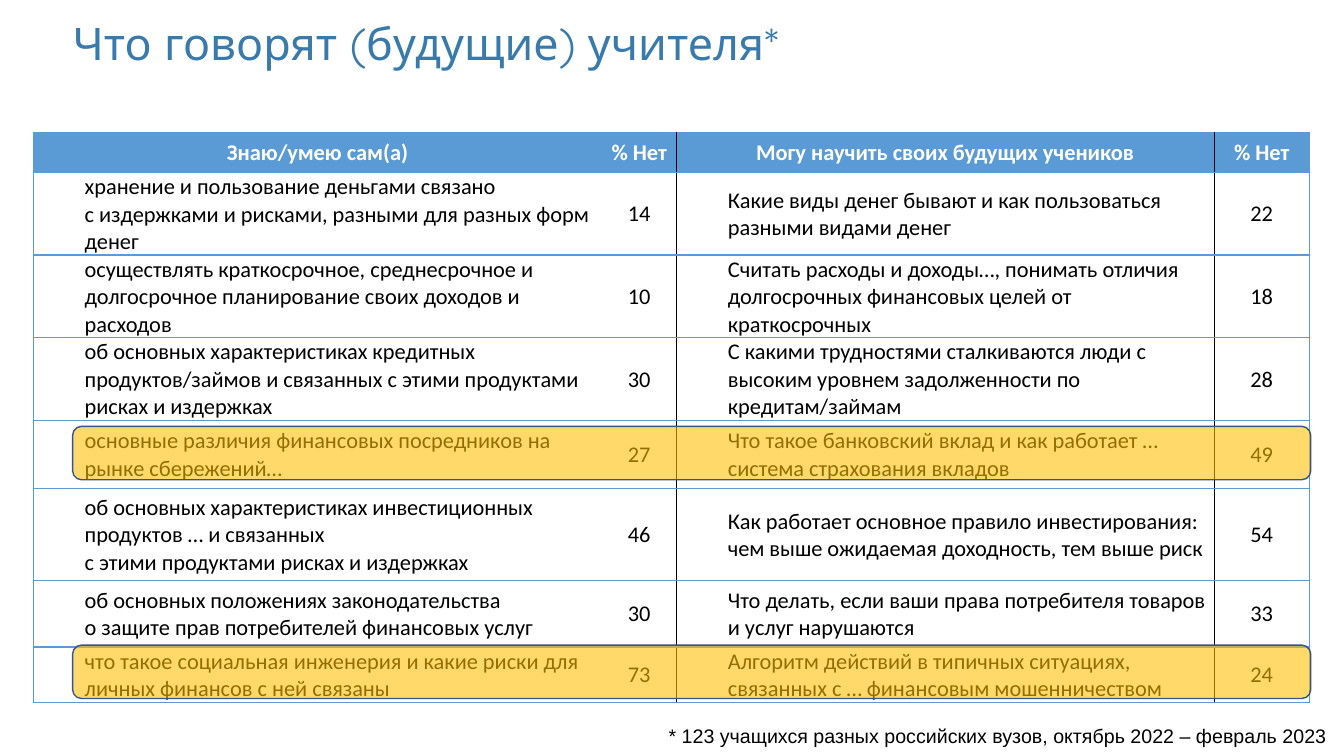
from dataclasses import dataclass

from lxml.etree import SubElement
from pptx import Presentation
from pptx.dml.color import RGBColor
from pptx.enum.shapes import MSO_SHAPE
from pptx.enum.text import MSO_ANCHOR, PP_ALIGN
from pptx.oxml.ns import qn
from pptx.util import Inches, Pt


@dataclass(frozen=True)
class Theme:
    """Colours, fonts and type sizes of the slide."""
    title: str = "387AAC"
    blue: str = "5B9BD5"
    black: str = "000000"
    white: str = "FFFFFF"
    marker: str = "FFC000"
    marker_line: str = "325491"
    title_font: str = "Quicksand"
    table_font: str = "Calibri"
    note_font: str = "Arial"
    title_size: int = 32
    table_size: int = 16
    note_size: int = 14


THEME = Theme()
COLUMNS = [5.64, 0.74, 5.33, 0.95]
ROWS = [0.39, 0.82, 0.82, 0.82, 0.68, 0.91, 0.66, 0.55]
MARKER_TOPS = [4.23, 6.4]
DIVIDERS = {1: 1, 2: 0.5}
SURVEY = [
    ("Знаю/умею сам(а)", "% Нет", "Могу научить своих будущих учеников", "% Нет"),
    ("хранение и пользование деньгами связано\nс издержками и рисками, разными для разных форм денег", "14",
     "Какие виды денег бывают и как пользоваться разными видами денег", "22"),
    ("осуществлять краткосрочное, среднесрочное и долгосрочное планирование своих доходов и расходов", "10",
     "Считать расходы и доходы…, понимать отличия долгосрочных финансовых целей от краткосрочных", "18"),
    ("об основных характеристиках кредитных продуктов/займов и связанных с этими продуктами рисках и издержках", "30",
     "С какими трудностями сталкиваются люди с высоким уровнем задолженности по кредитам/займам", "28"),
    ("основные различия финансовых посредников на рынке сбережений…", "27",
     "Что такое банковский вклад и как работает …система страхования вкладов", "49"),
    ("об основных характеристиках инвестиционных продуктов … и связанных\nс этими продуктами рисках и издержках", "46",
     "Как работает основное правило инвестирования: чем выше ожидаемая доходность, тем выше риск", "54"),
    ("об основных положениях законодательства\nо защите прав потребителей финансовых услуг", "30",
     "Что делать, если ваши права потребителя товаров и услуг нарушаются", "33"),
    ("что такое социальная инженерия и какие риски для личных финансов с ней связаны", "73",
     "Алгоритм действий в типичных ситуациях, связанных с … финансовым мошенничеством", "24"),
]


def set_attrs(target, values):
    """Set each named attribute on the target."""
    for name, value in values.items():
        setattr(target, name, value)


def write(tf, text, font, size, color, align, bold=False, spacing=None):
    """Fill a text frame with uniformly formatted text."""
    tf.text = text
    for p in tf.paragraphs:
        set_attrs(p, {"alignment": align, "line_spacing": spacing})
        for r in p.runs:
            set_attrs(r.font, {"name": font, "size": Pt(size), "bold": bold})
            r.font.color.rgb = RGBColor.from_string(color)


def add_text(s, box, margins, **style):
    """Add a wrapping text box."""
    tf = s.shapes.add_textbox(*map(Inches, box)).text_frame
    tf.word_wrap = True
    set_attrs(tf, {f"margin_{side}": Inches(m) for side, m in margins.items()})
    write(tf, **style)


def add_border(cell, edge, color, width):
    """Draw one cell border, or clear it when there is no colour."""
    ln = SubElement(cell._tc.get_or_add_tcPr(), qn(f"a:{edge}"), w=str(Pt(width)))
    if color is None:
        SubElement(ln, qn("a:noFill"))
    else:
        SubElement(SubElement(ln, qn("a:solidFill")), qn("a:srgbClr"), val=color)


def divider(index):
    """Return colour and width of the vertical line before a column."""
    if index in (0, len(COLUMNS)):
        return THEME.blue, 1
    if index == 1:
        return None, 0
    return THEME.black, DIVIDERS[index - 1]


def format_cell(cell, text, column, header):
    """Write, border and fill one survey cell."""
    statement = not header and column % 2 == 0
    set_attrs(cell, {
        "margin_left": Inches(0.51 if statement else 0.01), "margin_right": Inches(0.01),
        "margin_top": Inches(0.01), "margin_bottom": 0, "vertical_anchor": MSO_ANCHOR.MIDDLE,
    })
    write(cell.text_frame, text, THEME.table_font, THEME.table_size,
          THEME.white if header else THEME.black,
          PP_ALIGN.LEFT if statement else PP_ALIGN.CENTER, header)
    add_border(cell, "lnL", *divider(column))
    add_border(cell, "lnR", *divider(column + 1))
    for edge in ("lnT", "lnB"):
        add_border(cell, edge, THEME.blue, 1)
    cell.fill.solid()
    cell.fill.fore_color.rgb = RGBColor.from_string(THEME.blue if header else THEME.white)


def add_survey(s):
    """Add the survey table."""
    box = map(Inches, (0.33, 1.32, sum(COLUMNS), sum(ROWS)))
    table = s.shapes.add_table(len(ROWS), len(COLUMNS), *box).table
    for column, width in zip(table.columns, COLUMNS):
        column.width = Inches(width)
    for i, (height, texts) in enumerate(zip(ROWS, SURVEY)):
        table.rows[i].height = Inches(height)
        for j, text in enumerate(texts):
            format_cell(table.cell(i, j), text, j, i == 0)


def add_marker(s, top):
    """Add a translucent highlight across a table row."""
    sp = s.shapes.add_shape(MSO_SHAPE.ROUNDED_RECTANGLE, *map(Inches, (0.72, top, 12.28, 0.53)))
    sp.shadow.inherit = False
    sp.fill.solid()
    sp.fill.fore_color.rgb = RGBColor.from_string(THEME.marker)
    SubElement(sp._element.spPr.find(f".//{qn('a:srgbClr')}"), qn("a:alpha"), val="58000")
    sp.line.color.rgb = RGBColor.from_string(THEME.marker_line)
    sp.line.width = Pt(1)


def main():
    """Build and save the slide."""
    prs = Presentation()
    set_attrs(prs, {"slide_width": Inches(13.33), "slide_height": Inches(7.5)})
    s = prs.slides.add_slide(prs.slide_layouts[6])
    add_text(s, (0.72, 0.22, 9, 0.96), dict.fromkeys(("left", "top", "right", "bottom"), 0),
             text="Что говорят (будущие) учителя*", font=THEME.title_font,
             size=THEME.title_size, color=THEME.title, align=PP_ALIGN.LEFT, spacing=0.9)
    add_survey(s)
    add_text(s, (5.78, 7.13, 7.48, 0.34), {},
             text="* 123 учащихся разных российских вузов, октябрь 2022 – февраль 2023",
             font=THEME.note_font, size=THEME.note_size, color=THEME.black, align=PP_ALIGN.RIGHT)
    for top in MARKER_TOPS:
        add_marker(s, top)
    prs.save("out.pptx")


if __name__ == "__main__":
    main()
